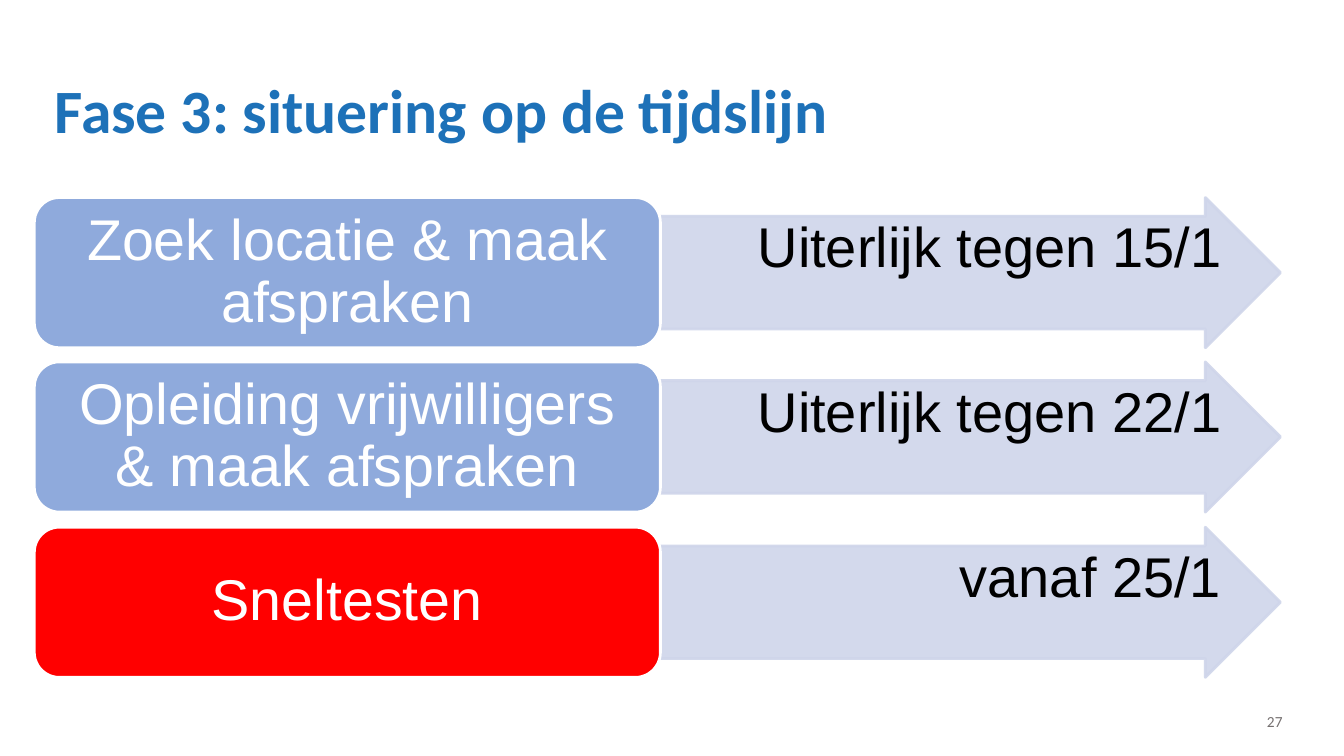
from dataclasses import dataclass

from lxml import etree
from pptx import Presentation
from pptx.dml.color import RGBColor
from pptx.enum import shapes, text
from pptx.oxml import ns
from pptx.util import Pt

PX = 9144  # 100 px to the inch


@dataclass(frozen=True)
class Theme:
    head: str = "1D71B8"
    step: str = "8FAADC"
    alert: str = "FF0000"
    arrow: str = "CFD5EA"
    light: str = "FFFFFF"
    dark: str = "000000"
    grey: str = "757070"
    sans: str = "Calibri"
    body: str = "Arial"
    title: int = 44
    label: int = 41
    date: int = 40
    small: int = 11


T = Theme()
SIZE = (1333, 750)
TITLE = "Fase 3: situering op de tijdslijn"
PAGE = "27"
STEPS = [
    ("Zoek locatie & maak afspraken", "Uiterlijk tegen 15/1", T.step),
    ("Opleiding vrijwilligers & maak afspraken", "Uiterlijk tegen 22/1", T.step),
    ("Sneltesten", "vanaf 25/1", T.alert),
]
LEFT, SPLIT, RIGHT = 34, 655, 1270
TOP, BOTTOM, HIGH = 196, 672, 149

ALIGN = text.PP_ALIGN
ANCHOR = text.MSO_ANCHOR


def emu(*box):
    return [v * PX for v in box]


def write(shape, words, font, size, color, align, anchor, pad, bold=False, lead=0.9):
    frame = shape.text_frame
    frame.text = words
    frame.word_wrap = True
    frame.auto_size = text.MSO_AUTO_SIZE.NONE
    frame.vertical_anchor = anchor
    frame.margin_left, frame.margin_top = emu(*pad)
    frame.margin_right, frame.margin_bottom = emu(*pad)
    para = frame.paragraphs[0]
    para.alignment = align
    para.line_spacing = lead
    para.font.name = font
    para.font.size = Pt(size)
    para.font.bold = bold
    para.font.color.rgb = RGBColor.from_string(color)


def draw(slide, kind, box, fill, line):
    shape = slide.shapes.add_shape(kind, *emu(*box))
    shape.shadow.inherit = False
    shape.fill.solid()
    shape.fill.fore_color.rgb = RGBColor.from_string(fill)
    shape.line.color.rgb = RGBColor.from_string(line)
    shape.line.width = Pt(2)
    return shape


def fade(shape, percent):
    """Set the opacity of the fill and the line."""
    for color in shape._element.spPr.iter(ns.qn("a:srgbClr")):
        etree.SubElement(color, ns.qn("a:alpha"), val=str(percent * 1000))


def main():
    deck = Presentation()
    deck.slide_width, deck.slide_height = emu(*SIZE)
    slide = deck.slides.add_slide(deck.slide_layouts[5])

    title = slide.shapes.title
    title.left, title.top, title.width, title.height = emu(44, 40, 1238, 145)
    write(title, TITLE, T.sans, T.title, T.head, ALIGN.LEFT, ANCHOR.MIDDLE,
          (10, 5), bold=True)

    room = BOTTOM - HIGH - TOP
    for i, (label, date, fill) in enumerate(STEPS):
        top = TOP + room * i // (len(STEPS) - 1)
        arrow = draw(slide, shapes.MSO_SHAPE.RIGHT_ARROW,
                     (SPLIT, top, RIGHT - SPLIT, HIGH), T.arrow, T.arrow)
        arrow.adjustments[0] = 0.75
        arrow.adjustments[1] = 0.5
        fade(arrow, 90)
        write(arrow, date, T.body, T.date, T.dark, ALIGN.RIGHT, ANCHOR.TOP, (3, 3))

        step = draw(slide, shapes.MSO_SHAPE.ROUNDED_RECTANGLE,
                    (LEFT, top, SPLIT - LEFT, HIGH), fill, T.light)
        write(step, label, T.body, T.label, T.light, ALIGN.CENTER, ANCHOR.MIDDLE,
              (17, 9))

    page = slide.shapes.add_textbox(*emu(982, 696, 300, 40))
    write(page, PAGE, T.sans, T.small, T.grey, ALIGN.RIGHT, ANCHOR.MIDDLE,
          (10, 5), lead=1.0)
    deck.save("out.pptx")


if __name__ == "__main__":
    main()
